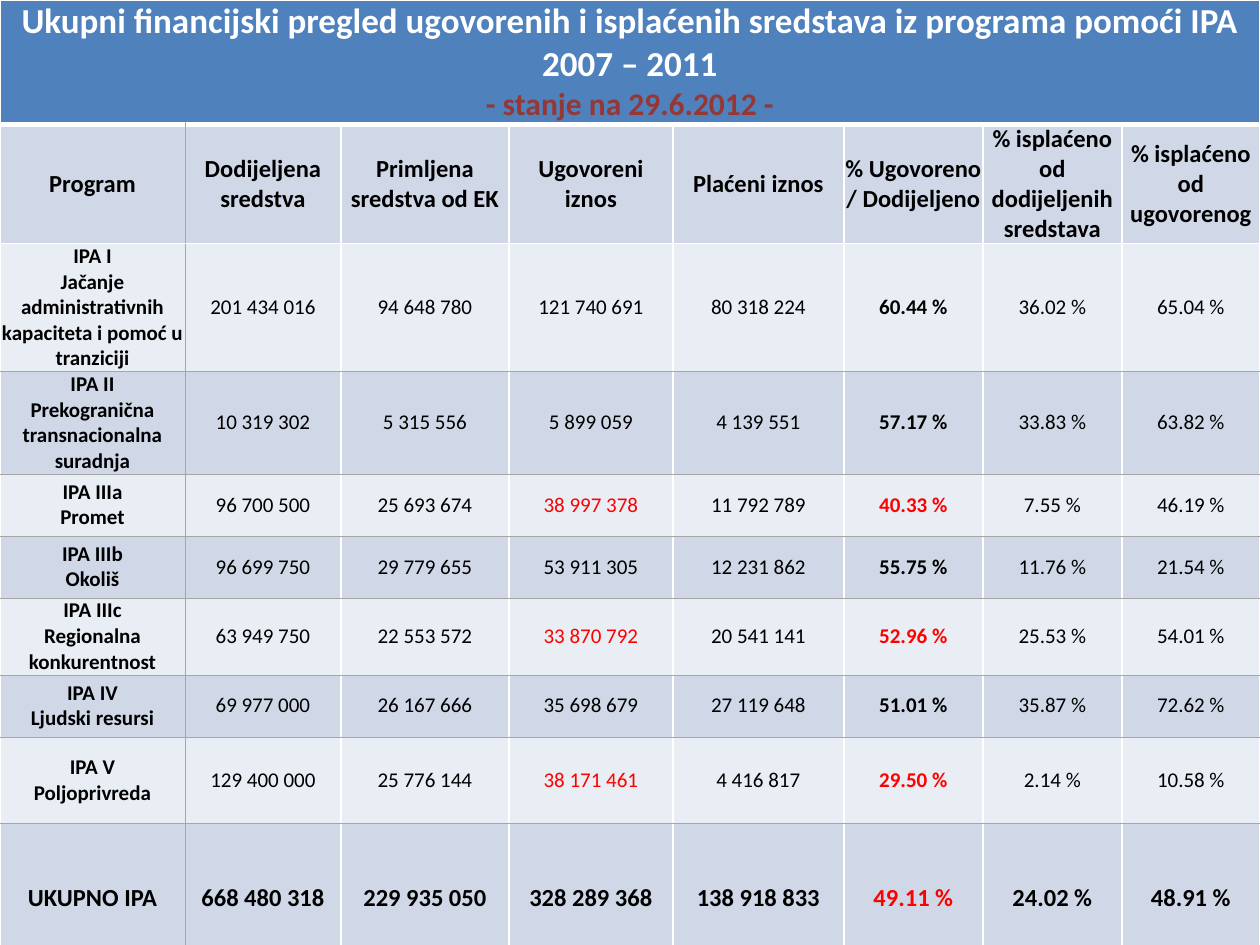
"""Build the slide with the IPA 2007–2011 financial overview table."""
import pptx
import pptx.dml.color
import pptx.enum.text
import pptx.oxml
import pptx.oxml.ns
import pptx.util

PX = 914400 // 126
WHITE, GREY, BLACK, RED = "FFFFFF", "A6A6A6", "000000", "FF0000"
LIGHT, DARK = "E9EDF4", "D0D8E8"


def rgb(value):
    return pptx.dml.color.RGBColor.from_string(value)


def set_border(cell, position, side, color, width):
    namespace = pptx.oxml.ns.nsdecls("a")
    line = pptx.oxml.parse_xml(
        f'<a:ln{side} {namespace} w="{int(width * 12700)}"><a:solidFill>'
        f'<a:srgbClr val="{color}"/></a:solidFill></a:ln{side}>')
    cell._tc.get_or_add_tcPr().insert(position, line)


rows = [
    ["Ukupni financijski pregled ugovorenih i isplaćenih sredstava iz programa "
     "pomoći IPA 2007 – 2011\n- stanje na 29.6.2012 -"] + [""] * 7,
    ["Program", "Dodijeljena sredstva", "Primljena sredstva od EK", "Ugovoreni\niznos",
     "Plaćeni iznos", "% Ugovoreno / Dodijeljeno",
     "% isplaćeno od dodijeljenih sredstava", "% isplaćeno od ugovorenog"],
    ["IPA I\nJačanje administrativnih kapaciteta i pomoć u tranziciji", "201 434 016",
     "94 648 780", "121 740 691", "80 318 224", "60.44 %", "36.02 %", "65.04 %"],
    ["IPA II\nPrekogranična transnacionalna suradnja", "10 319 302",
     "5 315 556", "5 899 059", "4 139 551", "57.17 %", "33.83 %", "63.82 %"],
    ["IPA IIIa\nPromet", "96 700 500",
     "25 693 674", "38 997 378", "11 792 789", "40.33 %", "7.55 %", "46.19 %"],
    ["IPA IIIb\nOkoliš", "96 699 750",
     "29 779 655", "53 911 305", "12 231 862", "55.75 %", "11.76 %", "21.54 %"],
    ["IPA IIIc\nRegionalna konkurentnost", "63 949 750",
     "22 553 572", "33 870 792", "20 541 141", "52.96 %", "25.53 %", "54.01 %"],
    ["IPA IV\nLjudski resursi", "69 977 000",
     "26 167 666", "35 698 679", "27 119 648", "51.01 %", "35.87 %", "72.62 %"],
    ["IPA V\nPoljoprivreda", "129 400 000",
     "25 776 144", "38 171 461", "4 416 817", "29.50 %", "2.14 %", "10.58 %"],
    ["UKUPNO IPA", "668 480 318",
     "229 935 050", "328 289 368", "138 918 833", "49.11 %", "24.02 %", "48.91 %"],
]
column_widths = [185, 156, 168, 164, 171, 139, 139, 138]
row_heights = [123, 112, 120, 96, 62, 62, 72, 62, 87, 149]
red_cells = {(4, 3), (4, 5), (6, 3), (6, 5), (8, 3), (8, 5), (9, 5)}
title_row, header_row, total_row = 0, 1, len(rows) - 1

presentation = pptx.Presentation()
presentation.slide_width = 1260 * PX
presentation.slide_height = 945 * PX
slide = presentation.slides.add_slide(presentation.slide_layouts[6])
table = slide.shapes.add_table(len(rows), len(column_widths), 0, 0,
                               sum(column_widths) * PX, sum(row_heights) * PX).table
for column, width in zip(table.columns, column_widths):
    column.width = width * PX
for row, height in zip(table.rows, row_heights):
    row.height = height * PX
table.cell(0, 0).merge(table.cell(0, len(column_widths) - 1))

for r, texts in enumerate(rows):
    for c, text in enumerate(texts):
        cell = table.cell(r, c)
        cell.margin_left = cell.margin_right = cell.margin_top = cell.margin_bottom = 0
        cell.vertical_anchor = pptx.enum.text.MSO_ANCHOR.MIDDLE
        cell.fill.solid()
        band = DARK if r % 2 or r == header_row else LIGHT
        cell.fill.fore_color.rgb = rgb("4F81BD" if r == title_row else band)

        thin, thick, heavy = (GREY, 0.25), (WHITE, 1), (WHITE, 3)
        left = thin if c == 1 and r > title_row else thick
        right = thin if c == 0 and r > title_row else thick
        top = heavy if r == header_row else thin if r > header_row + 1 else thick
        bottom = heavy if r == title_row else thin if header_row < r < total_row else thick
        for position, (side, border) in enumerate(zip("LRTB", (left, right, top, bottom))):
            set_border(cell, position, side, *border)

        cell.text_frame.text = text
        for index, paragraph in enumerate(cell.text_frame.paragraphs):
            paragraph.alignment = pptx.enum.text.PP_ALIGN.CENTER
            size = 14 if r in (header_row, total_row) else 12
            color = RED if (r, c) in red_cells else BLACK
            if r == title_row:
                size, color = [(20, WHITE), (18, "953735")][index]
            for run in paragraph.runs:
                run.font.name = "Calibri"
                run.font.size = pptx.util.Pt(size)
                run.font.bold = r in (title_row, header_row, total_row) or c in (0, 5)
                run.font.color.rgb = rgb(color)

presentation.save("out.pptx")
